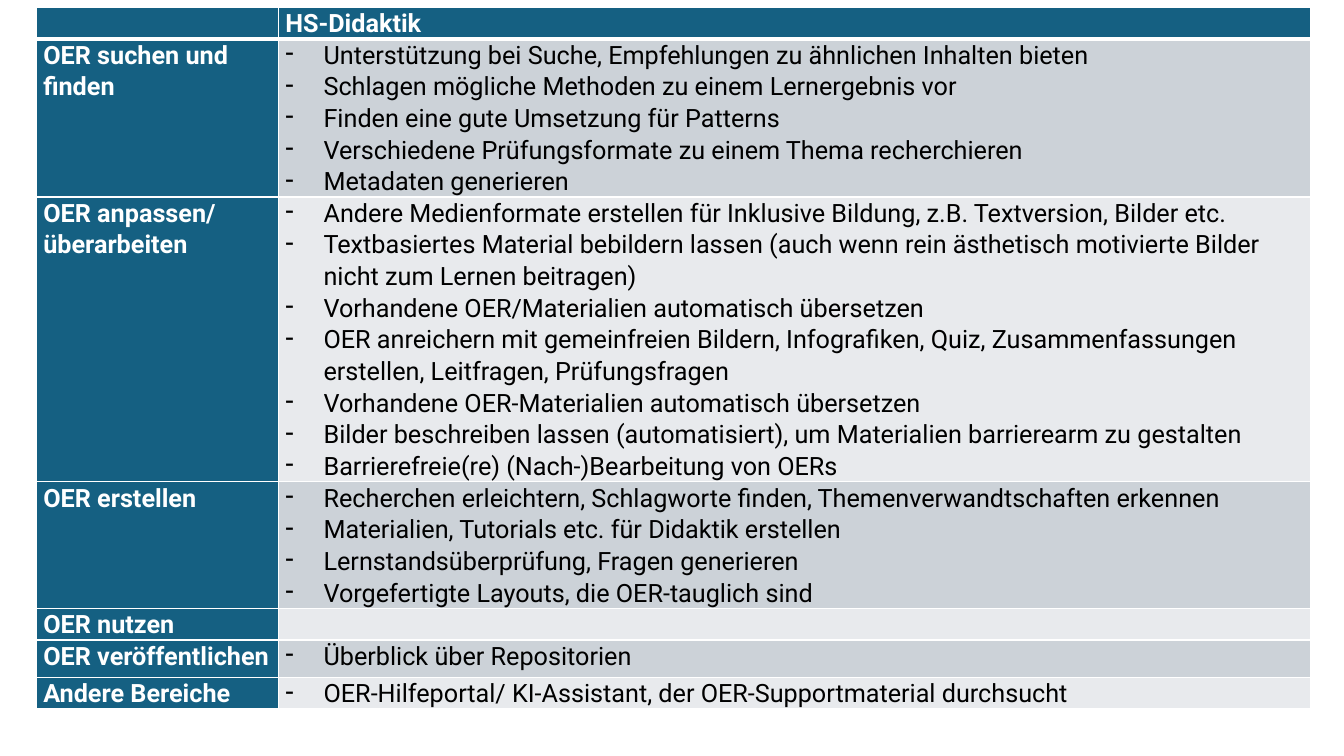
"""Builds a slide with a table of ideas for AI support in working with OER."""
from lxml import etree
from pptx import Presentation
from pptx.dml.color import RGBColor
from pptx.oxml import parse_xml
from pptx.oxml.ns import qn
from pptx.util import Inches, Pt

FONT, WHITE, BLACK, TEAL = "Roboto", "FFFFFF", "000000", "156082"
BANDS = ["CCD2D8", "E8EAED"]
NAMESPACE = "http://schemas.openxmlformats.org/drawingml/2006/main"
LINE_HEIGHT = 0.314
INDENT = Inches(0.38)
AREAS = [
    ("", ["HS-Didaktik"], 1),
    ("OER suchen und finden", [
        "Unterstützung bei Suche, Empfehlungen zu ähnlichen Inhalten bieten",
        "Schlagen mögliche Methoden zu einem Lernergebnis vor",
        "Finden eine gute Umsetzung für Patterns",
        "Verschiedene Prüfungsformate zu einem Thema recherchieren",
        "Metadaten generieren"], 5),
    ("OER anpassen/ überarbeiten", [
        "Andere Medienformate erstellen für Inklusive Bildung, z.B. Textversion, Bilder etc.",
        "Textbasiertes Material bebildern lassen (auch wenn rein ästhetisch motivierte Bilder "
        "nicht zum Lernen beitragen)",
        "Vorhandene OER/Materialien automatisch übersetzen",
        "OER anreichern mit gemeinfreien Bildern, Infografiken, Quiz, Zusammenfassungen "
        "erstellen, Leitfragen, Prüfungsfragen",
        "Vorhandene OER-Materialien automatisch übersetzen",
        "Bilder beschreiben lassen (automatisiert), um Materialien barrierearm zu gestalten",
        "Barrierefreie(re) (Nach-)Bearbeitung von OERs"], 9),
    ("OER erstellen", [
        "Recherchen erleichtern, Schlagworte finden, Themenverwandtschaften erkennen",
        "Materialien, Tutorials etc. für Didaktik erstellen",
        "Lernstandsüberprüfung, Fragen generieren",
        "Vorgefertigte Layouts, die OER-tauglich sind"], 4),
    ("OER nutzen", [""], 1),
    ("OER veröffentlichen", ["Überblick über Repositorien"], 1.18),
    ("Andere Bereiche", ["OER-Hilfeportal/ KI-Assistant, der OER-Supportmaterial durchsucht"], 1),
]


def color(hex_code):
    return RGBColor.from_string(hex_code)


def fill_cell(cell, texts, background, ink, bold, bulleted, bottom_width):
    cell.margin_left = cell.margin_right = Inches(0.07)
    cell.margin_top = cell.margin_bottom = 0
    cell.fill.solid()
    cell.fill.fore_color.rgb = color(background)
    edges = [("lnL", 1), ("lnR", 1), ("lnT", 1), ("lnB", bottom_width)]
    for position, (edge, width) in enumerate(edges):
        cell._tc.tcPr.insert(position, parse_xml(
            f'<a:{edge} xmlns:a="{NAMESPACE}" w="{Pt(width)}">'
            f'<a:solidFill><a:srgbClr val="{WHITE}"/></a:solidFill></a:{edge}>'))
    cell.text = "\n".join(texts)
    for paragraph in cell.text_frame.paragraphs:
        paragraph.line_spacing = 1.07
        paragraph.space_after = Pt(0)
        if bulleted and paragraph.text:
            properties = paragraph._p.get_or_add_pPr()
            properties.set("marL", str(INDENT))
            properties.set("indent", str(-INDENT))
            etree.SubElement(properties, qn("a:buChar")).set("char", "-")
        paragraph.font.name = FONT
        paragraph.font.size = Pt(18)
        paragraph.font.bold = bold
        paragraph.font.color.rgb = color(ink)
    paragraph.space_after = Pt(8)


presentation = Presentation()
presentation.slide_width, presentation.slide_height = Inches(13.33), Inches(7.5)
slide = presentation.slides.add_slide(presentation.slide_layouts[6])
total_lines = sum(lines for _, _, lines in AREAS)
overview = slide.shapes.add_table(
    len(AREAS), 2, Inches(0.36), Inches(0.07),
    Inches(12.64), Inches(total_lines * LINE_HEIGHT)).table
overview.horz_banding = False
overview.columns[0].width, overview.columns[1].width = Inches(2.4), Inches(10.24)

for row, (area, ideas, lines) in enumerate(AREAS):
    overview.rows[row].height = Inches(lines * LINE_HEIGHT)
    is_header = row == 0
    bottom_width = 3 if is_header else 1
    fill_cell(overview.cell(row, 0), [area], TEAL, WHITE, True, False, bottom_width)
    if is_header:
        fill_cell(overview.cell(row, 1), ideas, TEAL, WHITE, True, False, bottom_width)
    else:
        fill_cell(overview.cell(row, 1), ideas, BANDS[(row - 1) % 2], BLACK, False, True,
                  bottom_width)

presentation.save("out.pptx")
